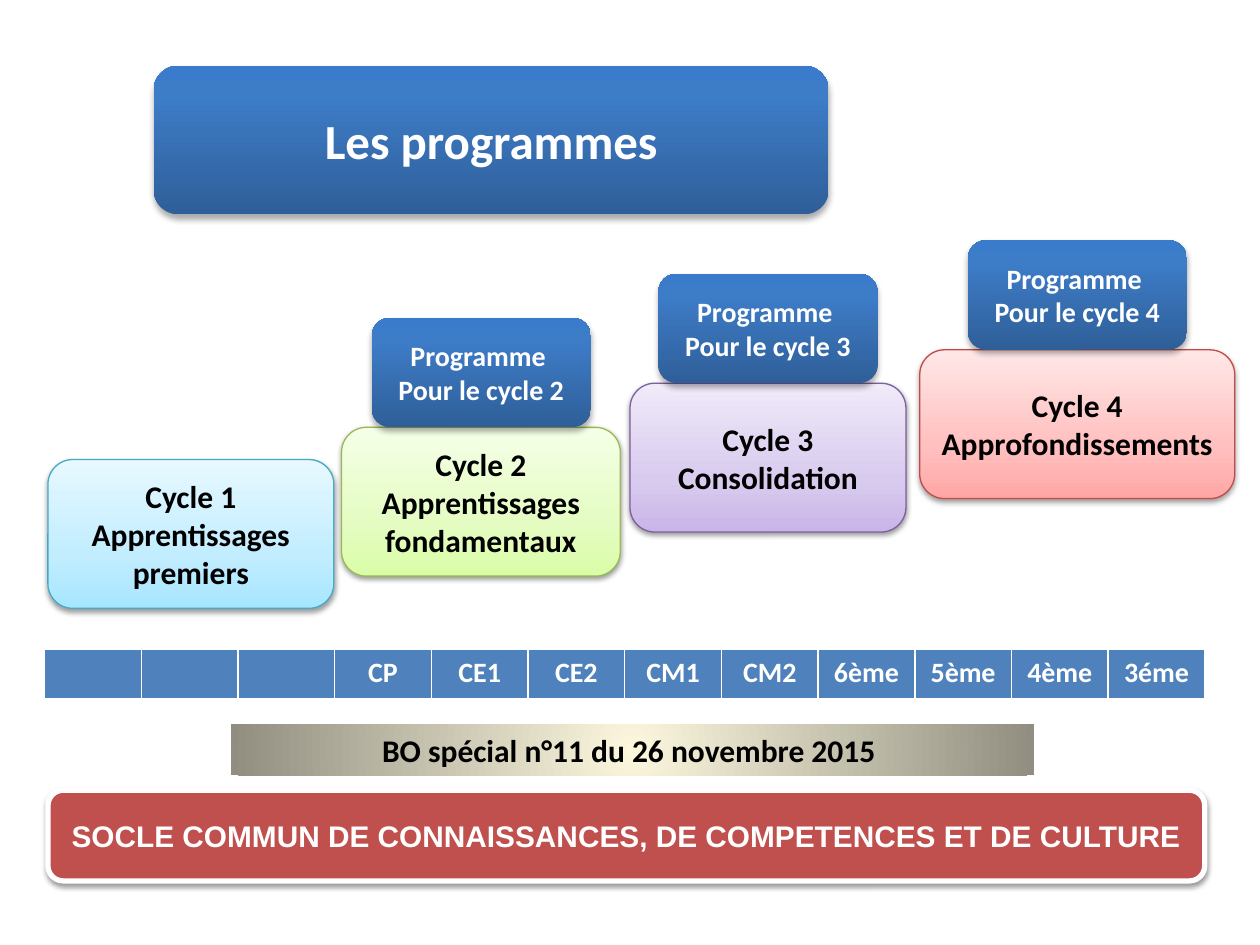
"""Build the slide showing the school programmes, cycle by cycle."""
from pptx import Presentation
from pptx import util as u
from pptx.dml.color import RGBColor
from pptx.enum import shapes, text
from pptx.oxml import ns, parse_xml

WHITE = RGBColor(0xFF, 0xFF, 0xFF)
BLACK = RGBColor(0x00, 0x00, 0x00)
BLUE = RGBColor(0x4F, 0x81, 0xBD)
RED = RGBColor(0xC0, 0x50, 0x4D)
TEAL_LINE = RGBColor(0x46, 0xAA, 0xC5)
GREEN_LINE = RGBColor(0x98, 0xB9, 0x55)
PURPLE_LINE = RGBColor(0x7D, 0x60, 0xA0)
PINK_LINE = RGBColor(0xBF, 0x4C, 0x48)


def stops(positions, *colors):
    return list(zip(positions, (RGBColor.from_string(c) for c in colors)))


PALE = (0, 35, 100)
TEAL = stops(PALE, "A7E6FF", "C1EDFF", "E7F8FF")
GREEN = stops(PALE, "DAFDA7", "E4FCC2", "F5FFE7")
PURPLE = stops(PALE, "C9B5E8", "D8CBEE", "F0EAF9")
PINK = stops(PALE, "FFA6A5", "FFC0BF", "FFE7E7")
DEEP_BLUE = stops((0, 80, 100), "2F5F99", "3D7CC7", "3A7CCB")
SAND = stops((0, 100), "FCF7DD", "918E81")

UPWARD = '<a:lin ang="16200000" scaled="0"/>'
RADIAL = ('<a:path path="circle"><a:fillToRect l="50000" t="50000" '
          'r="50000" b="50000"/></a:path>')
SOFT_SHADOW = (38, 3.15, 1.57)
DEEP_SHADOW = (32, 3.5, 2.2)


def write(tf, content, size=18, color=BLACK, font="Calibri"):
    for i, line in enumerate(content.split("\n")):
        p = tf.paragraphs[0] if i == 0 else tf.add_paragraph()
        p.alignment = text.PP_ALIGN.CENTER
        r = p.add_run()
        r.text = line
        r.font.size = u.Pt(size)
        r.font.name = font
        r.font.bold = True
        r.font.color.rgb = color


class SlideBuilder:
    def __init__(self, slide, shadow=SOFT_SHADOW):
        self.slide = slide
        self.shadow = shadow

    def box(self, box, content, fill, line=None, line_width=0.75, shadow=None,
            kind=shapes.MSO_SHAPE.ROUNDED_RECTANGLE, direction=UPWARD, **fmt):
        sp = self.slide.shapes.add_shape(kind, *map(u.Pt, box))
        if isinstance(fill, RGBColor):
            sp.fill.solid()
            sp.fill.fore_color.rgb = fill
        else:
            self.gradient(sp, fill, direction)
        if line is None:
            sp.line.fill.background()
        else:
            sp.line.color.rgb = line
            sp.line.width = u.Pt(line_width)
        sp.shadow.inherit = False
        if shadow:
            self.cast(sp, *shadow)
        tf = sp.text_frame
        tf.word_wrap = True
        tf.vertical_anchor = text.MSO_ANCHOR.MIDDLE
        write(tf, content, **fmt)
        return sp

    def gradient(self, sp, colors, direction):
        sp.fill.background()
        spPr = sp.element.spPr
        gs = "".join(f'<a:gs pos="{pos * 1000}"><a:srgbClr val="{c}"/></a:gs>'
                     for pos, c in colors)
        spPr.replace(spPr.find(ns.qn("a:noFill")), parse_xml(
            f'<a:gradFill {ns.nsdecls("a")} rotWithShape="1">'
            f'<a:gsLst>{gs}</a:gsLst>{direction}</a:gradFill>'))

    def cast(self, sp, alpha, blur, distance):
        sp.element.spPr.find(ns.qn("a:effectLst")).append(parse_xml(
            f'<a:outerShdw {ns.nsdecls("a")} blurRad="{u.Pt(blur)}" '
            f'dist="{u.Pt(distance)}" dir="5400000" rotWithShape="0">'
            f'<a:srgbClr val="{BLACK}"><a:alpha val="{alpha * 1000}"/>'
            '</a:srgbClr></a:outerShdw>'))

    def cycle(self, left, top, width, content, fill, line):
        self.box((left, top, width, 85), content, fill, line, shadow=self.shadow)

    def programme(self, left, cycle_top, number):
        self.box((left, cycle_top - 62.6, 125.3, 62.6),
                 f"Programme \nPour le cycle {number}", DEEP_BLUE,
                 shadow=DEEP_SHADOW, size=16, color=WHITE)

    def table(self, left, top, width, height, labels):
        table = self.slide.shapes.add_table(
            1, len(labels), *map(u.Pt, (left, top, width, height))).table
        for cell, label in zip(table.iter_cells(), labels):
            for side, weight in (("L", 1), ("R", 1), ("T", 1), ("B", 3)):
                cell._tc.get_or_add_tcPr().append(parse_xml(
                    f'<a:ln{side} {ns.nsdecls("a")} w="{u.Pt(weight)}"><a:solidFill>'
                    f'<a:srgbClr val="{WHITE}"/></a:solidFill></a:ln{side}>'))
            cell.fill.solid()
            cell.fill.fore_color.rgb = BLUE
            if label:
                write(cell.text_frame, label, size=16, color=WHITE)


def main():
    prs = Presentation()
    prs.slide_width, prs.slide_height = u.Pt(720), u.Pt(540)
    b = SlideBuilder(prs.slides.add_slide(prs.slide_layouts[6]))

    b.box((27.4, 451.6, 661, 51.8),
          "SOCLE COMMUN DE CONNAISSANCES, DE COMPETENCES ET DE CULTURE",
          RED, WHITE, line_width=3, shadow=SOFT_SHADOW,
          size=17, color=WHITE, font="Arial")

    cycles = [
        (27.4, 262.6, 163.4, "Apprentissages\npremiers", TEAL, TEAL_LINE, None),
        (195.2, 244.2, 159.3, "Apprentissages\nfondamentaux", GREEN, GREEN_LINE, 212.4),
        (360, 219, 157.7, "Consolidation", PURPLE, PURPLE_LINE, 376.2),
        (525.6, 199.9, 180, "Approfondissements", PINK, PINK_LINE, 553),
    ]
    for number, (left, top, width, name, fill, line, tab) in enumerate(cycles, 1):
        b.cycle(left, top, width, f"Cycle {number}\n{name}", fill, line)
        if tab is not None:
            b.programme(tab, top, number)

    levels = ["CP", "CE1", "CE2", "CM1", "CM2", "6ème", "5ème", "4ème", "3éme"]
    b.table(25.5, 371, 663, 29.2, [""] * 3 + levels)

    b.box((87.8, 37.5, 385.7, 85), "Les programmes", DEEP_BLUE,
          shadow=DEEP_SHADOW, size=28, color=WHITE)
    b.box((131.9, 413.8, 459.2, 29.1), "BO spécial n°11 du 26 novembre 2015 ",
          SAND, kind=shapes.MSO_SHAPE.RECTANGLE, direction=RADIAL)

    prs.save("out.pptx")


if __name__ == "__main__":
    main()
